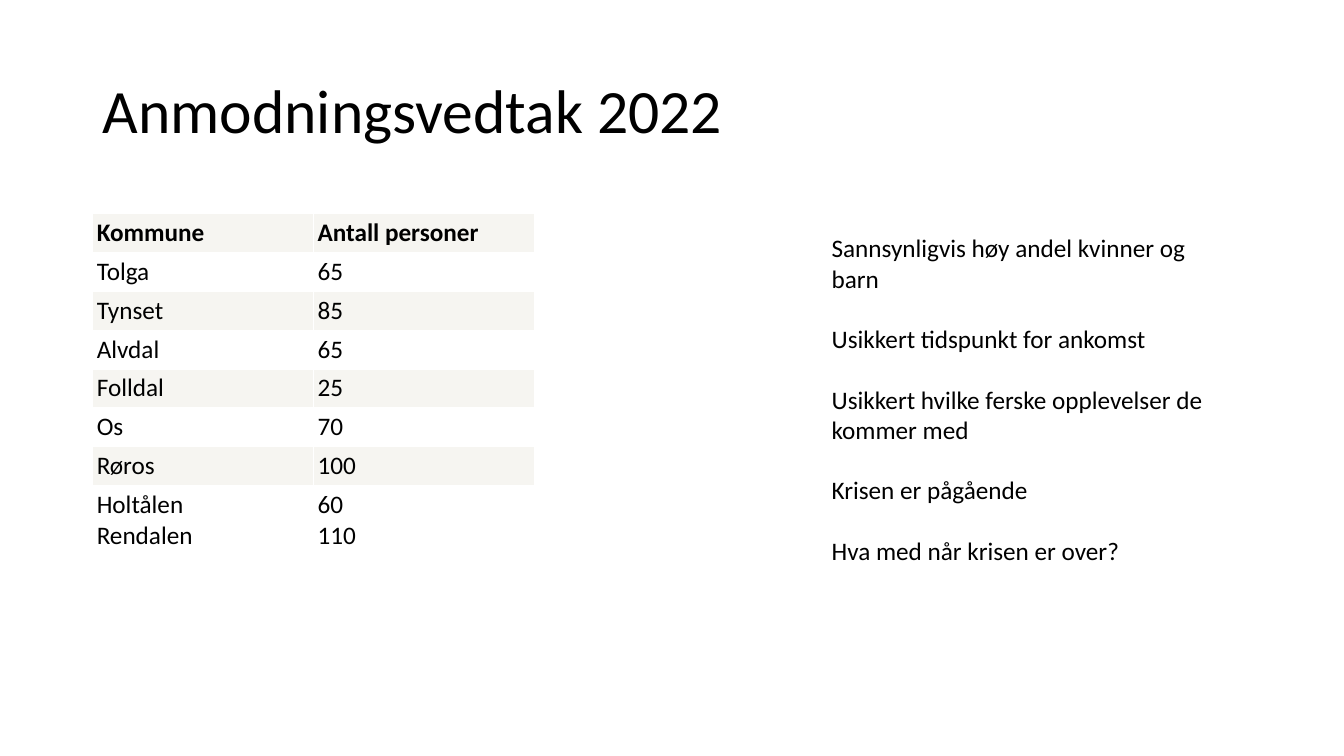
"""Build the slide on municipal settlement requests for 2022."""
from dataclasses import dataclass

from pptx import Presentation
from pptx.dml.color import RGBColor
from pptx.enum.text import MSO_ANCHOR, MSO_AUTO_SIZE
from pptx.util import Inches, Pt

TITLE = "Anmodningsvedtak 2022"
ROWS = [
    (["Kommune"], ["Antall personer"]),
    (["Tolga"], ["65"]),
    (["Tynset"], ["85"]),
    (["Alvdal"], ["65"]),
    (["Folldal"], ["25"]),
    (["Os"], ["70"]),
    (["Røros"], ["100"]),
    (["Holtålen", "Rendalen"], ["60", "110"]),
    ([], []),
]
NOTES = [
    "Sannsynligvis høy andel kvinner og barn",
    "Usikkert tidspunkt for ankomst",
    "Usikkert hvilke ferske opplevelser de kommer med",
    "Krisen er pågående",
    "Hva med når krisen er over?",
]


@dataclass(frozen=True)
class Theme:
    font: str = "Calibri"
    ink: str = "000000"
    band: str = "F6F5F1"
    plain: str = "FFFFFF"
    title: int = 44
    body: int = 18
    note_gap: float = 21.6


THEME = Theme()
WIDTH, HEIGHT = 13.33, 7.5
LEFT = 0.92
TABLE_TOP, COLUMN, ROW, LINE, INSET = 2.12, 2.19, 0.35, 0.27, 0.04


def write(frame, lines, size=THEME.body, bold=False, gap=0, spacing=None):
    for index, line in enumerate(lines):
        para = frame.paragraphs[0] if index == 0 else frame.add_paragraph()
        if index:
            para.space_before = Pt(gap)
        if spacing:
            para.line_spacing = spacing
        span = para.add_run()
        span.text = line
        span.font.name = THEME.font
        span.font.size = Pt(size)
        span.font.bold = bold
        span.font.color.rgb = RGBColor.from_string(THEME.ink)


def add_text(page, place, lines, anchor=MSO_ANCHOR.TOP, **style):
    frame = page.shapes.add_textbox(*map(Inches, place)).text_frame
    frame.word_wrap = True
    frame.auto_size = MSO_AUTO_SIZE.NONE
    frame.vertical_anchor = anchor
    write(frame, lines, **style)


def add_requests(page):
    heights = [ROW + LINE * max(len(row[0]) - 1, 0) for row in ROWS]
    count = len(ROWS[0])
    place = (LEFT, TABLE_TOP, COLUMN * count, sum(heights))
    table = page.shapes.add_table(len(ROWS), count, *map(Inches, place)).table
    for column in table.columns:
        column.width = Inches(COLUMN)
    for y, (row, height) in enumerate(zip(ROWS, heights)):
        table.rows[y].height = Inches(height)
        band = THEME.plain if y % 2 or y == len(ROWS) - 1 else THEME.band
        for x, lines in enumerate(row):
            cell = table.cell(y, x)
            cell.fill.solid()
            cell.fill.fore_color.rgb = RGBColor.from_string(band)
            cell.margin_left = cell.margin_right = Inches(INSET)
            cell.margin_top = cell.margin_bottom = Inches(INSET)
            write(cell.text_frame, lines, bold=y == 0)


def main():
    deck = Presentation()
    deck.slide_width, deck.slide_height = Inches(WIDTH), Inches(HEIGHT)
    page = deck.slides.add_slide(deck.slide_layouts[6])
    add_text(page, (LEFT, 0.4, WIDTH - 2 * LEFT, 1.45), [TITLE],
             anchor=MSO_ANCHOR.MIDDLE, size=THEME.title, spacing=0.9)
    add_requests(page)
    add_text(page, (8.15, 2.26, 3.97, 3.43), NOTES, gap=THEME.note_gap)
    deck.save("out.pptx")


if __name__ == "__main__":
    main()
